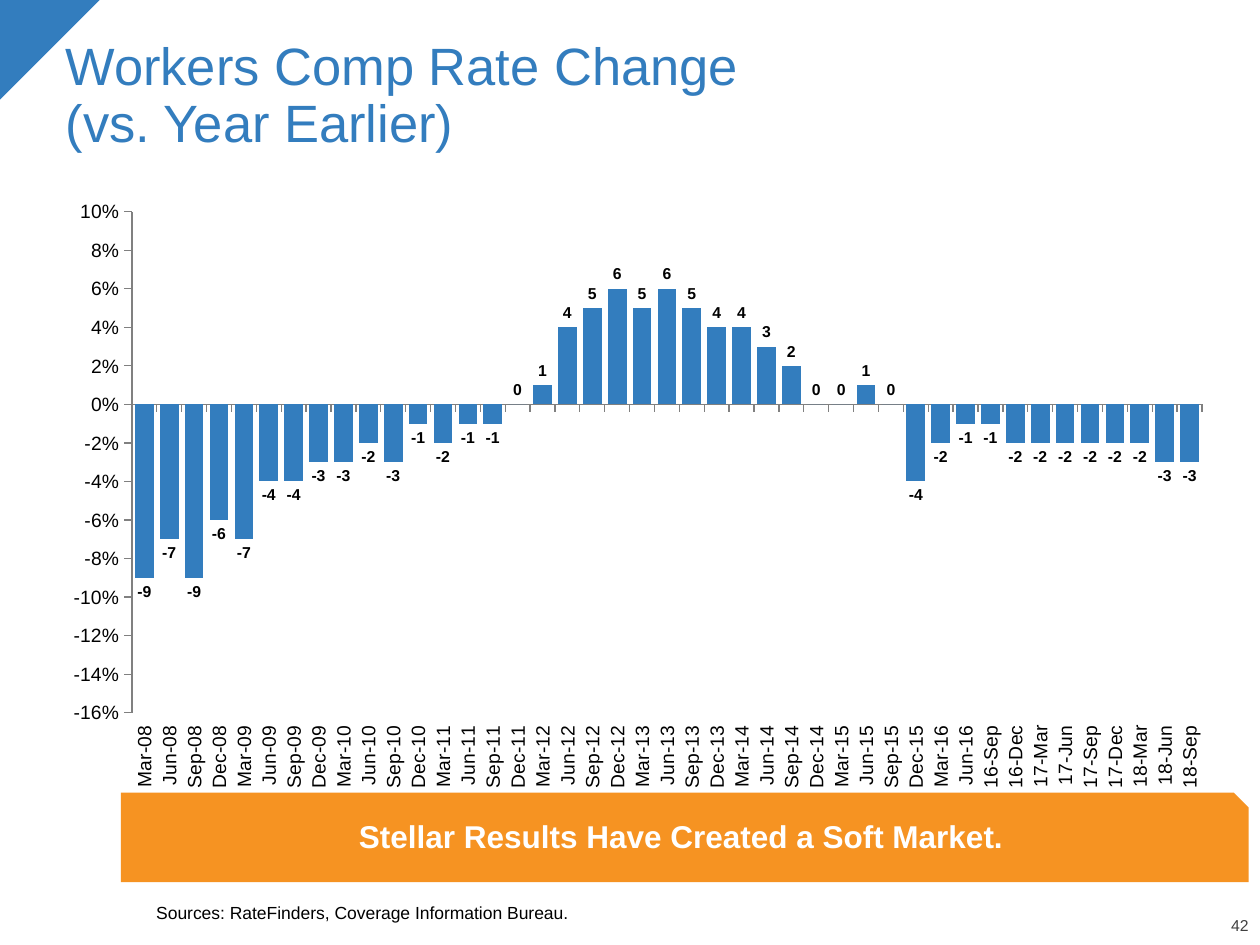
from lxml.etree import SubElement
from pptx import Presentation
from pptx.chart.data import CategoryChartData
from pptx.dml.color import RGBColor
from pptx.enum.chart import XL_CHART_TYPE, XL_LABEL_POSITION, XL_TICK_LABEL_POSITION, XL_TICK_MARK
from pptx.enum.shapes import MSO_SHAPE
from pptx.enum.text import MSO_ANCHOR, PP_ALIGN
from pptx.oxml.ns import qn
from pptx.util import Inches, Pt

TITLE = "Workers Comp Rate Change\v(vs. Year Earlier)"
TAKEAWAY = "Stellar Results Have Created a Soft Market."
SOURCES = "Sources: RateFinders, Coverage Information Bureau."
PAGE_NUMBER = "42"

RATE_CHANGES = {
    "Mar-08": -9, "Jun-08": -7, "Sep-08": -9, "Dec-08": -6,
    "Mar-09": -7, "Jun-09": -4, "Sep-09": -4, "Dec-09": -3,
    "Mar-10": -3, "Jun-10": -2, "Sep-10": -3, "Dec-10": -1,
    "Mar-11": -2, "Jun-11": -1, "Sep-11": -1, "Dec-11": 0,
    "Mar-12": 1, "Jun-12": 4, "Sep-12": 5, "Dec-12": 6,
    "Mar-13": 5, "Jun-13": 6, "Sep-13": 5, "Dec-13": 4,
    "Mar-14": 4, "Jun-14": 3, "Sep-14": 2, "Dec-14": 0,
    "Mar-15": 0, "Jun-15": 1, "Sep-15": 0, "Dec-15": -4,
    "Mar-16": -2, "Jun-16": -1, "16-Sep": -1, "16-Dec": -2,
    "17-Mar": -2, "17-Jun": -2, "17-Sep": -2, "17-Dec": -2,
    "18-Mar": -2, "18-Jun": -3, "18-Sep": -3,
}
PLOT_AREA = {"x": 0.084, "y": 0.069, "w": 0.895, "h": 0.783}

THEME = {
    "font": "Arial",
    "blue": RGBColor(0x33, 0x7D, 0xBE),
    "orange": RGBColor(0xF6, 0x93, 0x22),
    "white": RGBColor(0xFF, 0xFF, 0xFF),
    "black": RGBColor(0, 0, 0),
    "dark": RGBColor(0x40, 0x40, 0x40),
    "axis": RGBColor(0x80, 0x80, 0x80),
    "title": Pt(30), "takeaway": Pt(18), "chart": Pt(11),
    "sources": Pt(10), "label": Pt(9), "number": Pt(9),
}


def set_font(font, size, color, bold=False):
    font.name = THEME["font"]
    font.size = THEME[size]
    font.color.rgb = THEME[color]
    font.bold = bold


def write(shape, text, size, color, bold=False, align=PP_ALIGN.LEFT,
          anchor=MSO_ANCHOR.MIDDLE, insets=(0, 0, 0, 0)):
    frame = shape.text_frame
    frame.word_wrap = True
    frame.vertical_anchor = anchor
    (frame.margin_left, frame.margin_top,
     frame.margin_right, frame.margin_bottom) = map(Inches, insets)
    frame.text = text
    paragraph = frame.paragraphs[0]
    paragraph.alignment = align
    paragraph.line_spacing = 0.9
    for span in paragraph.runs:
        set_font(span.font, size, color, bold)


def add_filled_shape(page, kind, place, color):
    shape = page.shapes.add_shape(kind, *map(Inches, place))
    shape.shadow.inherit = False
    shape.fill.solid()
    shape.fill.fore_color.rgb = THEME[color]
    shape.line.fill.background()
    return shape


def fix_plot_area(chart):
    plot_area = chart._chartSpace.chart.plotArea
    for old in plot_area.findall(qn("c:layout")):
        plot_area.remove(old)
    layout = SubElement(plot_area, qn("c:layout"))
    plot_area.insert(0, layout)
    manual = SubElement(layout, qn("c:manualLayout"))
    settings = {"layoutTarget": "inner", "xMode": "edge", "yMode": "edge", **PLOT_AREA}
    for name, value in settings.items():
        SubElement(manual, qn(f"c:{name}")).set("val", str(value))


def add_rate_chart(page):
    data = CategoryChartData()
    data.categories = list(RATE_CHANGES)
    data.add_series("Series 1", list(RATE_CHANGES.values()))
    place = map(Inches, (0.25, 1.33, 9.49, 5.08))
    chart = page.shapes.add_chart(XL_CHART_TYPE.COLUMN_CLUSTERED, *place, data).chart
    chart.has_legend = False
    chart.has_title = False
    set_font(chart.font, "chart", "black")
    fix_plot_area(chart)

    for axis in (chart.category_axis, chart.value_axis):
        axis.has_major_gridlines = False
        axis.major_tick_mark = XL_TICK_MARK.OUTSIDE
        axis.minor_tick_mark = XL_TICK_MARK.NONE
        axis.format.line.color.rgb = THEME["axis"]
        set_font(axis.tick_labels.font, "chart", "black")
    months = chart.category_axis
    months.tick_label_position = XL_TICK_LABEL_POSITION.LOW
    months._element.txPr.bodyPr.set("rot", "-5400000")
    months._element.txPr.bodyPr.set("vert", "horz")
    percent = chart.value_axis
    percent.minimum_scale, percent.maximum_scale, percent.major_unit = -16, 10, 2
    percent.tick_labels.number_format = '#,##0"%"'
    percent.tick_labels.number_format_is_linked = False

    plot = chart.plots[0]
    plot.vary_by_categories = False
    plot.gap_width, plot.overlap = 33, -27
    series = plot.series[0]
    series.invert_if_negative = False
    series.format.fill.solid()
    series.format.fill.fore_color.rgb = THEME["blue"]
    labels = series.data_labels
    labels.show_value = True
    labels.position = XL_LABEL_POSITION.OUTSIDE_END
    set_font(labels.font, "label", "black", bold=True)


def main():
    deck = Presentation()
    deck.slide_width, deck.slide_height = Inches(10), Inches(7.5)
    page = deck.slides.add_slide(deck.slide_layouts[5])

    corner = add_filled_shape(page, MSO_SHAPE.RIGHT_TRIANGLE, (-0.01, 0, 0.8, 0.8), "blue")
    corner.rotation = 90

    title = page.shapes.title
    title.left, title.top, title.width, title.height = map(Inches, (0.42, 0.25, 9.25, 1.04))
    write(title, TITLE, "title", "blue", insets=(0.1, 0.05, 0.1, 0.05))

    add_rate_chart(page)

    banner = add_filled_shape(page, MSO_SHAPE.SNIP_1_RECTANGLE, (0.96, 6.29, 8.95, 0.71), "orange")
    write(banner, TAKEAWAY, "takeaway", "white", bold=True,
          align=PP_ALIGN.CENTER, insets=(0.1, 0.05, 0.1, 0.1))

    sources = page.shapes.add_textbox(*map(Inches, (1.24, 6.88, 8.4, 0.45)))
    write(sources, SOURCES, "sources", "black", anchor=MSO_ANCHOR.BOTTOM)

    number = page.shapes.add_textbox(*map(Inches, (9.43, 7.29, 0.48, 0.13)))
    write(number, PAGE_NUMBER, "number", "dark", align=PP_ALIGN.RIGHT, anchor=MSO_ANCHOR.BOTTOM)

    deck.save("out.pptx")


if __name__ == "__main__":
    main()
